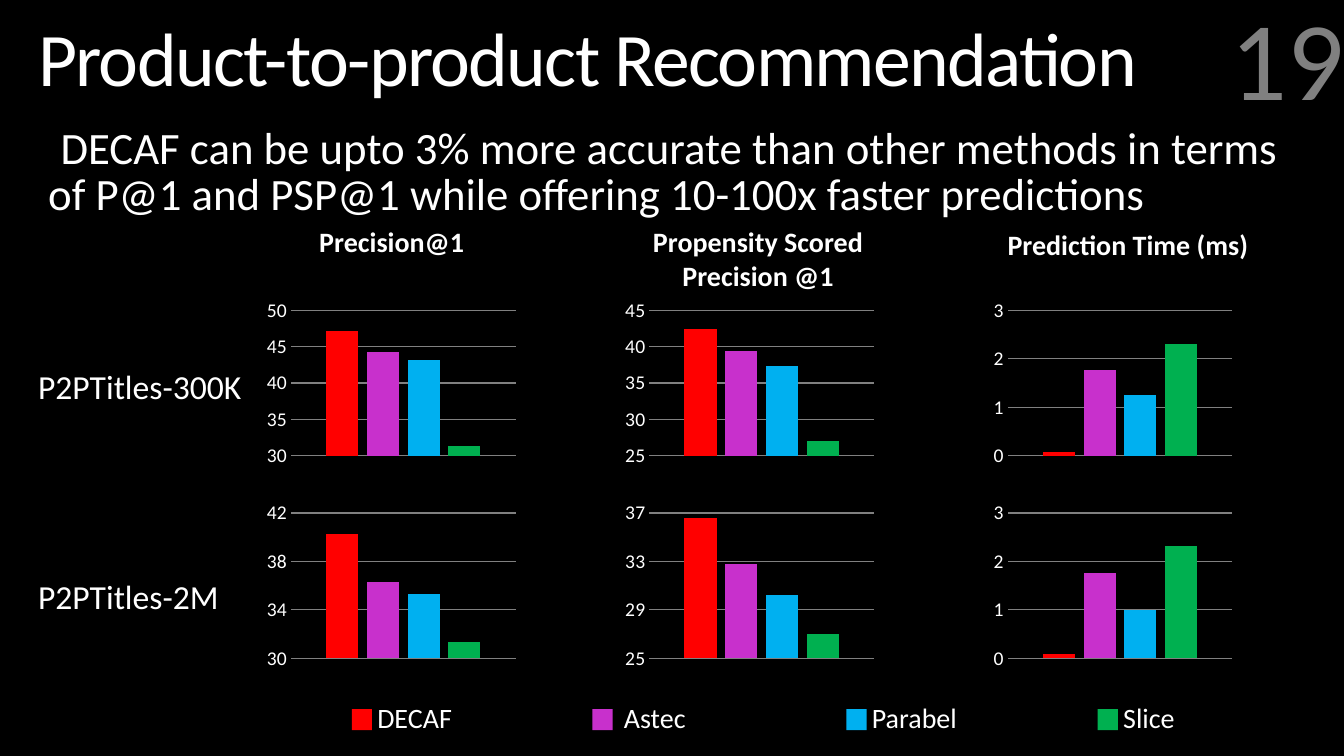
from dataclasses import dataclass

import pptx
import pptx.chart.data
import pptx.dml.color
import pptx.enum.chart
import pptx.enum.shapes
import pptx.enum.text
import pptx.oxml
import pptx.oxml.ns
import pptx.util
from lxml import etree

ALIGN = pptx.enum.text.PP_ALIGN
ANCHOR = pptx.enum.text.MSO_ANCHOR
SLIDE_WIDTH = pptx.util.Inches(13.333)
SLIDE_HEIGHT = pptx.util.Inches(7.5)
CELL_WIDTH = SLIDE_WIDTH / 100
CELL_HEIGHT = SLIDE_HEIGHT / 100


@dataclass(frozen=True)
class Theme:
    font: str = "Calibri"
    background: str = "000000"
    text: str = "FFFFFF"
    muted: str = "808080"
    methods: tuple = ("FF0000", "C830CC", "00B0F0", "00B050")
    title: int = 54
    number: int = 80
    body: int = 32
    row_label: int = 24
    label: int = 20
    tick: int = 14


THEME = Theme()


@dataclass(frozen=True)
class Box:
    left: float
    top: float
    width: float
    height: float

    def area(self, left, top, width, height):
        return Box(self.left + left, self.top + top, width, height)

    def emu(self):
        return (round(self.left * CELL_WIDTH), round(self.top * CELL_HEIGHT),
                round(self.width * CELL_WIDTH), round(self.height * CELL_HEIGHT))


METHODS = ("DECAF", "Astec", "Parabel", "Slice")
HEADINGS = (
    (("Precision@1",), Box(1.43, 0, 15.83, 5.87)),
    (("Propensity Scored", "Precision @1"), Box(27.9, 0, 17.4, 10.27)),
    (("Prediction Time (ms)",), Box(53.7, 0.4, 20.85, 5.87)),
)
DATASETS = (
    ("P2PTitles-300K", 8.26, (
        ((47.2, 44.3, 43.1, 31.3), (30, 50, 5)),
        ((42.4, 39.4, 37.3, 27), (25, 45, 5)),
        ((0.07, 1.77, 1.26, 2.31), (0, 3, 1)),
    )),
    ("P2PTitles-2M", 9.2, (
        ((40.3, 36.3, 35.3, 31.3), (30, 42, 4)),
        ((36.6, 32.8, 30.2, 27), (25, 37, 4)),
        ((0.08, 1.77, 0.99, 2.31), (0, 3, 1)),
    )),
)


def rgb(value):
    return pptx.dml.color.RGBColor.from_string(value)


def add_text(shapes, box, lines, size, color=THEME.text, bold=False,
             align=ALIGN.LEFT, anchor=ANCHOR.TOP):
    frame = shapes.add_textbox(*box.emu()).text_frame
    frame.word_wrap = True
    frame.vertical_anchor = anchor
    for index, line in enumerate(lines):
        para = frame.add_paragraph() if index else frame.paragraphs[0]
        para.alignment = align
        span = para.add_run()
        span.text = line
        span.font.name = THEME.font
        span.font.size = pptx.util.Pt(size)
        span.font.bold = bold
        span.font.color.rgb = rgb(color)
    return frame


def add_header(page, box):
    title = add_text(page.shapes, box.area(2.1, 0.53, 95.18, 15.73),
                     ["Product-to-product Recommendation"], THEME.title,
                     anchor=ANCHOR.MIDDLE).paragraphs[0]
    title.line_spacing = 0.85
    title.runs[0].font._element.set("spc", "-120")

    summary = add_text(page.shapes, box.area(2.1, 16.27, 95.18, 77.33), [
        "DECAF can be upto 3% more accurate than other methods in terms "
        "of P@1 and PSP@1 while offering 10-100x faster predictions"], THEME.body).paragraphs[0]
    summary.line_spacing = 0.85
    summary.space_before = pptx.util.Pt(13)
    properties = summary._p.get_or_add_pPr()
    indent = pptx.util.Inches(0.1)
    properties.set("marL", str(indent))
    properties.set("indent", str(-indent))
    bullet = etree.SubElement(properties, pptx.oxml.ns.qn("a:buChar"))
    bullet.set("char", " ")

    number = add_text(page.shapes, box.area(76, 0.67, 24, 15.6), ["19"], THEME.number,
                      THEME.muted, align=ALIGN.RIGHT, anchor=ANCHOR.BOTTOM)
    number.margin_right = number.margin_bottom = 0


def set_plot_area(chart, left, top, width, height):
    plot_area = chart._chartSpace.chart.plotArea
    for old in plot_area.findall(pptx.oxml.ns.qn("c:layout")):
        plot_area.remove(old)
    layout = etree.Element(pptx.oxml.ns.qn("c:layout"))
    manual = etree.SubElement(layout, pptx.oxml.ns.qn("c:manualLayout"))
    settings = (("layoutTarget", "inner"), ("xMode", "edge"), ("yMode", "edge"),
                ("x", left), ("y", top), ("w", width), ("h", height))
    for name, value in settings:
        etree.SubElement(manual, pptx.oxml.ns.qn("c:" + name)).set("val", str(value))
    plot_area.insert(0, layout)


def add_bars(page, box, values, scale):
    data = pptx.chart.data.CategoryChartData()
    data.categories = ["1"]
    for method, value in zip(METHODS, values):
        data.add_series(method, [value])
    chart = page.shapes.add_chart(
        pptx.enum.chart.XL_CHART_TYPE.COLUMN_CLUSTERED, *box.emu(), data).chart
    chart.has_legend = False
    chart.has_title = False
    chart.font.name = THEME.font
    chart.font.size = pptx.util.Pt(THEME.tick)
    chart.font.color.rgb = rgb(THEME.text)
    chart.category_axis.visible = False

    axis = chart.value_axis
    axis.minimum_scale, axis.maximum_scale, axis.major_unit = scale
    axis.major_tick_mark = pptx.enum.chart.XL_TICK_MARK.NONE
    axis.tick_labels.number_format = "General"
    axis.tick_labels.number_format_is_linked = False
    axis.format.line.fill.background()
    grid_line = axis.major_gridlines.format.line
    grid_line.color.rgb = rgb(THEME.muted)
    grid_line.width = pptx.util.Pt(0.75)

    plot = chart.plots[0]
    plot.gap_width = 219
    plot.overlap = -27
    plot.vary_by_categories = False
    for series, color in zip(plot.series, THEME.methods):
        series.format.fill.solid()
        series.format.fill.fore_color.rgb = rgb(color)
    set_plot_area(chart, 0.1, 0.07, 0.9, 0.86)


def add_headings(page, box):
    for lines, place in HEADINGS:
        add_text(page.shapes, box.area(place.left, place.top, place.width, place.height),
                 lines, THEME.label, bold=True, align=ALIGN.CENTER)


def add_dataset(page, box, name, label_top, panels):
    add_text(page.shapes, box.area(0, label_top, 18.1, 6.67), [name], THEME.row_label)
    for column, (values, scale) in enumerate(panels):
        add_bars(page, box.area(17.7 + column * 26.66, 0, 18.6, 22.4), values, scale)


def add_legend(page, box):
    places = ((0, 1.15), (17.9, 1.6), (36.8, 1.15), (55.5, 1.15))
    for method, color, (left, gap) in zip(METHODS, THEME.methods, places):
        group = page.shapes.add_group_shape()
        swatch = group.shapes.add_shape(pptx.enum.shapes.MSO_SHAPE.RECTANGLE,
                                        *box.area(left, 1.75, 1.5, 2.8).emu())
        swatch.shadow.inherit = False
        swatch.fill.solid()
        swatch.fill.fore_color.rgb = rgb(color)
        swatch.line.fill.background()
        add_text(group.shapes, box.area(left + gap, 0, 8, 5.87), [method], THEME.label)


def add_results_page(deck, box):
    page = deck.slides.add_slide(deck.slide_layouts[6])
    page.background.fill.solid()
    page.background.fill.fore_color.rgb = rgb(THEME.background)
    add_header(page, box)
    add_headings(page, box.area(19.8, 29.07, 75, 10.27))
    for row, (name, label_top, panels) in enumerate(DATASETS):
        add_dataset(page, box.area(2.1, 39.47 + row * 26.8, 90, 22.4), name, label_top, panels)
    add_legend(page, box.area(26.18, 92.05, 65, 5.87))


def main():
    deck = pptx.Presentation()
    deck.slide_width = SLIDE_WIDTH
    deck.slide_height = SLIDE_HEIGHT
    add_results_page(deck, Box(0, 0, 100, 100))
    deck.save("out.pptx")


if __name__ == "__main__":
    main()
